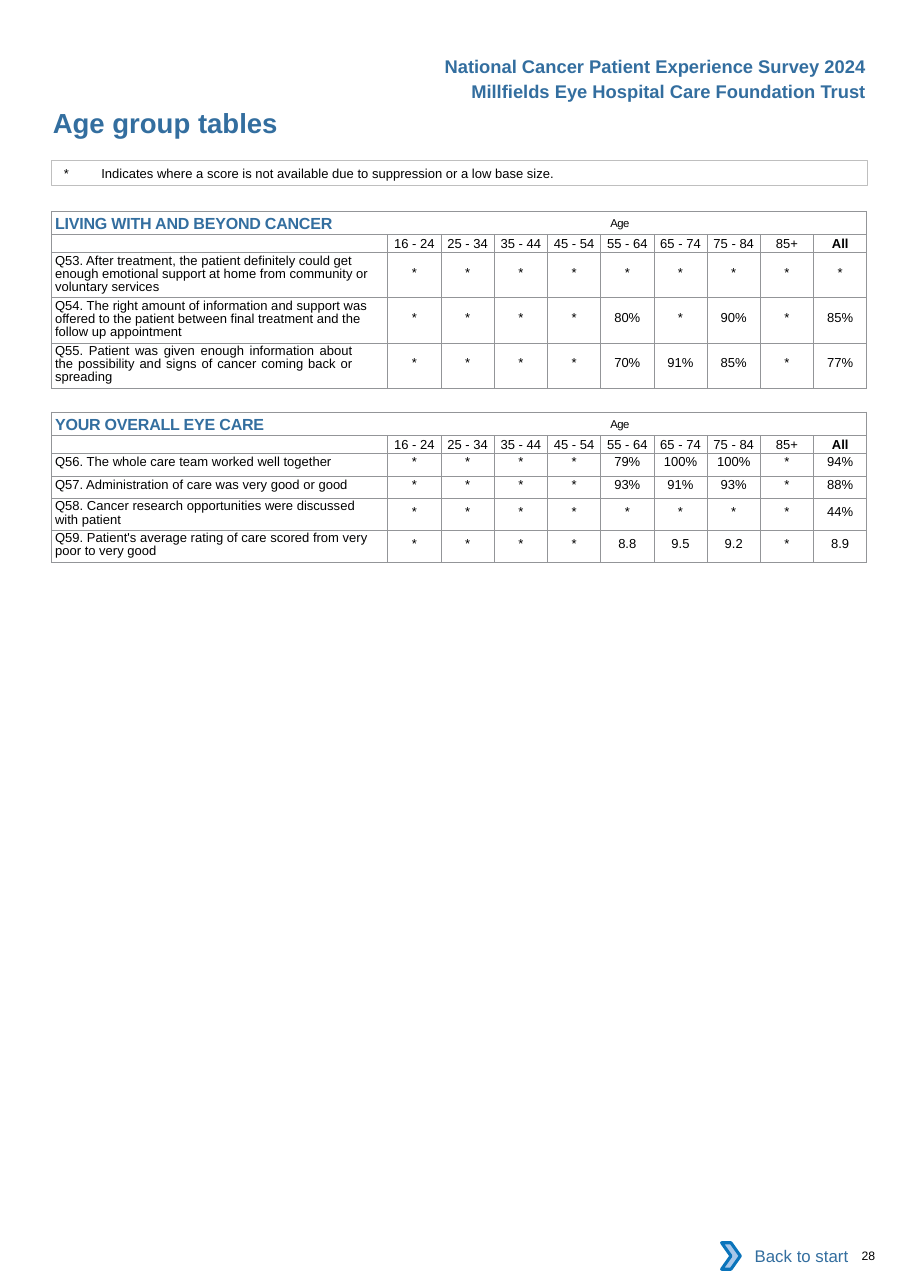
import pptx
import pptx.dml.color
import pptx.enum.shapes
import pptx.enum.text
import pptx.oxml.ns
import pptx.util
from lxml import etree

SCALE = 3048
BLUE, BLACK, WHITE = "336E9F", "000000", "FFFFFF"
ALIGN = pptx.enum.text.PP_ALIGN
ANCHOR = pptx.enum.text.MSO_ANCHOR
SHAPE = pptx.enum.shapes.MSO_SHAPE
POINT = pptx.util.Pt

LEFT, WIDTH = 141, 2220
QUESTION_WIDTH, SCORE_WIDTH = 915, 145
HEADING_HEIGHT, AGES_HEIGHT = 63, 49
AGES = ["16 - 24", "25 - 34", "35 - 44", "45 - 54", "55 - 64",
        "65 - 74", "75 - 84", "85+", "All"]
BODY = {"size": POINT(8.5)}
BOLD = {"size": POINT(8.5), "bold": True}
BANNER = {"size": POINT(12), "bold": True}
SECTION = {"size": POINT(10.5), "bold": True}
CENTRED = {"alignment": ALIGN.CENTER}
TIGHT = {"line_spacing": POINT(8.6)}

LIVING = [
    ("Q53. After treatment, the patient definitely could get enough emotional "
     "support at home from community or voluntary services", "* * * * * * * * *", 123),
    ("Q54. The right amount of information and support was offered to the patient "
     "between final treatment and the follow up appointment",
     "* * * * 80% * 90% * 85%", 123),
    ("Q55. Patient was given enough information about the possibility and signs of "
     "cancer coming back or spreading", "* * * * 70% 91% 85% * 77%", 123),
]
OVERALL = [
    ("Q56. The whole care team worked well together",
     "* * * * 79% 100% 100% * 94%", 62),
    ("Q57. Administration of care was very good or good",
     "* * * * 93% 91% 93% * 88%", 60),
    ("Q58. Cancer research opportunities were discussed with patient",
     "* * * * * * * * 44%", 87),
    ("Q59. Patient's average rating of care scored from very poor to very good",
     "* * * * 8.8 9.5 9.2 * 8.9", 87),
]
SCORE_INSETS = {123: 36, 87: 18, 62: 3, 60: 3}


def px(length):
    """Turn px into EMU."""
    return pptx.util.Emu(length * SCALE)


def colour(code):
    """Turn a hex string into a colour."""
    return pptx.dml.color.RGBColor.from_string(code)


def apply(target, values):
    """Set every attribute named in the format values."""
    for name, value in values.items():
        setattr(target, name, value)


def add_child(parent, tag, **attributes):
    """Append a drawing element with the given attributes."""
    return etree.SubElement(parent, pptx.oxml.ns.qn("a:" + tag), attributes)


def write_span(para, text, font, code=BLACK, **marks):
    """Add a run with its font, colour and raw character marks."""
    span = para.add_run()
    span.text = text
    apply(span.font, {"name": "Arial", **font})
    span.font.color.rgb = colour(code)
    for name, value in marks.items():
        span.font._element.set(name, value)


def indent(para, left, right=0, tab=None):
    """Set the paragraph margins and an optional left tab stop."""
    properties = para._p.get_or_add_pPr()
    for name, value in {"marL": left, "marR": right}.items():
        properties.set(name, str(px(value)))
    if tab:
        tabs = add_child(properties, "tabLst")
        add_child(tabs, "tab", pos=str(px(tab)), algn="l")


def set_frame(frame, anchor=ANCHOR.TOP, sides=0, ends=0):
    """Set wrapping, anchor and insets, and return the first paragraph."""
    apply(frame, {"word_wrap": True, "vertical_anchor": anchor,
                  "margin_left": px(sides), "margin_right": px(sides),
                  "margin_top": px(ends), "margin_bottom": px(ends)})
    return frame.paragraphs[0]


def add_text(page, bounds, text, font, code=BLUE, **frame_format):
    """Add a one-line text box and return its paragraph."""
    box = page.shapes.add_textbox(*map(px, bounds))
    para = set_frame(box.text_frame, **frame_format)
    write_span(para, text, font, code)
    return para


def add_box(shapes, kind, bounds, fill=None, line=None, weight=0.5):
    """Add a preset shape with an optional fill and outline."""
    box = shapes.add_shape(kind, *map(px, bounds))
    box.shadow.inherit = False
    if fill:
        box.fill.solid()
        box.fill.fore_color.rgb = colour(fill)
    else:
        box.fill.background()
    if line:
        box.line.color.rgb = colour(line)
        box.line.width = POINT(weight)
    else:
        box.line.fill.background()
    return box


def format_cell(cell, top=0, anchor=ANCHOR.TOP):
    """Give a cell its borders and insets, and return its paragraph."""
    properties = cell._tc.get_or_add_tcPr()
    for side in ("lnL", "lnR", "lnT", "lnB"):
        border = add_child(properties, side, w=str(POINT(0.5)))
        add_child(add_child(border, "solidFill"), "srgbClr", val="939598")
    cell.fill.background()
    apply(cell, {"margin_left": 0, "margin_right": 0, "margin_bottom": 0,
                 "margin_top": px(top), "vertical_anchor": anchor})
    return cell.text_frame.paragraphs[0]


def write_headings(table, heading):
    """Fill the section heading and the row of age groups."""
    table.cell(0, 0).merge(table.cell(0, len(AGES)))
    for column in range(len(AGES) + 1):
        para = format_cell(table.cell(0, column), anchor=ANCHOR.MIDDLE)
        if column == 0:
            indent(para, 9, tab=1512)
            write_span(para, heading + "\t", SECTION, BLUE, spc="-10")
            write_span(para, "Age", {"size": POINT(12.8), "bold": False},
                       spc="-40", baseline="10000")
    blank = format_cell(table.cell(1, 0))
    add_child(blank._p, "endParaRPr", sz="850")
    for column, age in enumerate(AGES, 1):
        para = format_cell(table.cell(1, column), anchor=ANCHOR.MIDDLE)
        apply(para, {**CENTRED, "line_spacing": POINT(9.9)})
        write_span(para, age, BOLD if age == "All" else BODY)


def add_score_table(page, top, heading, questions):
    """Add a table of question scores by age group."""
    heights = [HEADING_HEIGHT, AGES_HEIGHT] + [height for _, _, height in questions]
    bounds = (LEFT, top, WIDTH, sum(heights))
    table = page.shapes.add_table(len(heights), len(AGES) + 1,
                                  *map(px, bounds)).table
    apply(table, {"first_row": False, "horz_banding": False})
    for row, height in zip(table.rows, heights):
        row.height = px(height)
    for index, column in enumerate(table.columns):
        column.width = px(SCORE_WIDTH if index else QUESTION_WIDTH)
    write_headings(table, heading)
    for row, (question, scores, height) in enumerate(questions, 2):
        single = height < 80
        justified = question.startswith("Q55")
        para = format_cell(table.cell(row, 0), top=3 if single else 6)
        apply(para, {} if single else TIGHT)
        apply(para, {"alignment": ALIGN.JUSTIFY if justified else ALIGN.LEFT})
        indent(para, 9, right=96 if justified else 36)
        write_span(para, question, BODY)
        for column, score in enumerate(scores.split(), 1):
            para = format_cell(table.cell(row, column), top=SCORE_INSETS[height])
            apply(para, CENTRED)
            write_span(para, score, BODY)


def add_note(page):
    """Add the outlined note that explains the asterisk."""
    box = add_box(page.shapes, SHAPE.RECTANGLE, (LEFT, 438, WIDTH, 66), line="BFBFBF")
    para = set_frame(box.text_frame, ends=12)
    para.alignment = ALIGN.LEFT
    indent(para, 33, tab=102)
    write_span(para, "*\tIndicates where a score is not available due to "
               "suppression or a low base size.", BODY)


def add_back_button(page):
    """Add the grouped label and chevron that lead back to the start."""
    group = page.shapes.add_group_shape()
    label = add_box(group.shapes, SHAPE.RECTANGLE, (1986, 3357, 354, 126), fill=WHITE)
    para = set_frame(label.text_frame, anchor=ANCHOR.MIDDLE, sides=30, ends=15)
    para.alignment = ALIGN.RIGHT
    write_span(para, "Back to start", {"size": POINT(11)}, BLUE)
    add_box(group.shapes, SHAPE.CHEVRON, (1965, 3384, 51, 72), "A8C7E9", "0A74BB", 2)


def main():
    """Build the page of age group tables."""
    deck = pptx.Presentation()
    apply(deck, {"slide_width": px(2478), "slide_height": px(3507)})
    page = deck.slides.add_slide(deck.slide_layouts[6])
    number = add_text(page, (2316, 3399, 153, 39), "28", {"size": POINT(8)}, BLACK)
    indent(number, 30)
    title = add_text(page, (LEFT, 288, 1239, 90), "Age group tables",
                     {"size": POINT(18), "bold": True})
    title.space_before = POINT(1)
    indent(title, 3)
    add_score_table(page, 575, "LIVING WITH AND BEYOND CANCER", LIVING)
    add_score_table(page, 1122, "YOUR OVERALL EYE CARE", OVERALL)
    add_note(page)
    for bounds, text in [
        ((1203, 204, 1185, 90), "Millfields Eye Hospital Care Foundation Trust"),
        ((1176, 136, 1212, 90), "National Cancer Patient Experience Survey 2024"),
    ]:
        banner = add_text(page, bounds, text, BANNER, sides=30, ends=15)
        banner.alignment = ALIGN.RIGHT
    add_back_button(page)
    deck.save("out.pptx")


if __name__ == "__main__":
    main()
